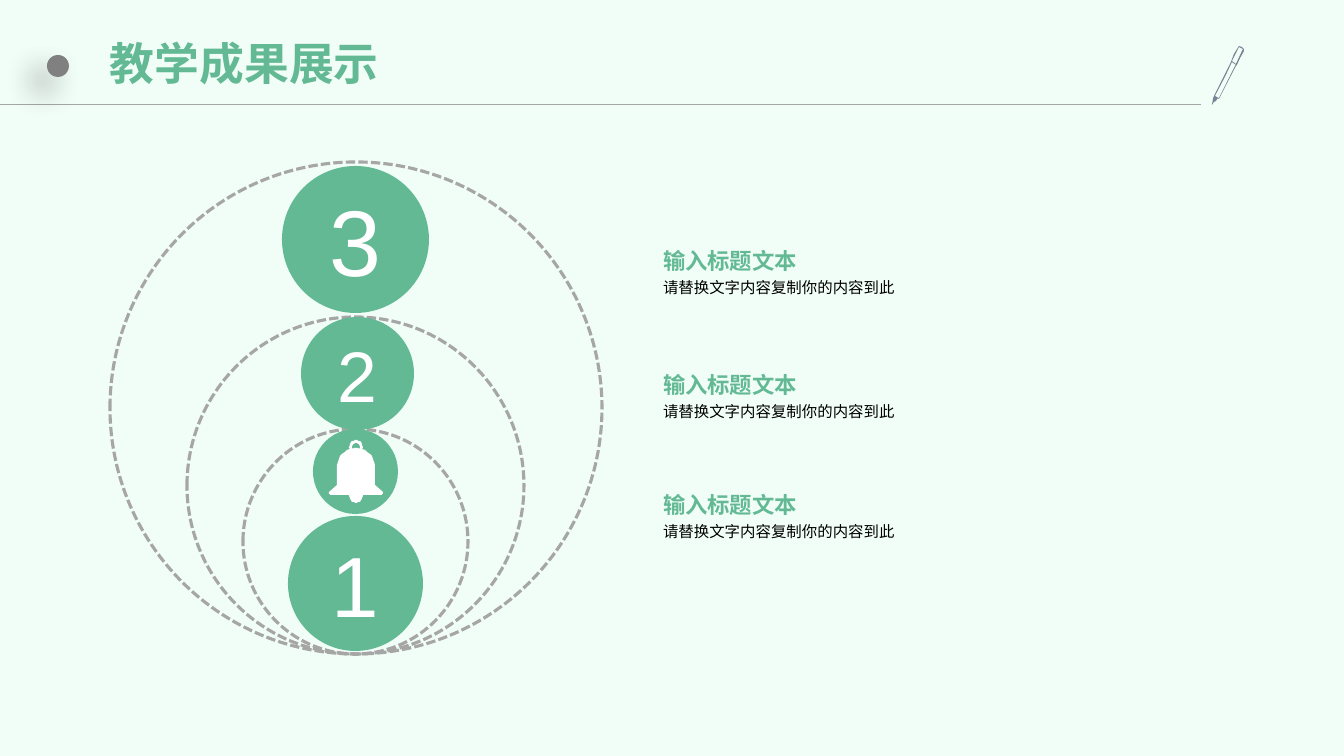
"""Build the teaching results slide with nested rings and three captions."""
from lxml import etree
from pptx import Presentation
from pptx.dml.color import RGBColor as RGB
from pptx.enum.dml import MSO_LINE as Dash
from pptx.enum.shapes import MSO_CONNECTOR as Conn, MSO_SHAPE as Shape
from pptx.enum.text import MSO_ANCHOR as Anchor, PP_ALIGN as Align
from pptx.oxml import parse_xml
from pptx.oxml.ns import nsdecls, qn
from pptx.util import Pt

TITLE = "教学成果展示"
CAPTIONS = [
    (274, "输入标题文本", "请替换文字内容复制你的内容到此"),
    (398, "输入标题文本", "请替换文字内容复制你的内容到此"),
    (518, "输入标题文本", "请替换文字内容复制你的内容到此"),
]
RINGS = [225, 337, 492]
DISCS = [
    (282, 166, 147, "3", 66.6),
    (301, 317, 113, "2", 51.1),
    (313, 429, 85, "", 0),
    (288, 516, 135, "1", 61),
]
MID, BASE = 356, 654
BELL = [
    [(356, 440)],
    [(359, 440), (363, 444), (363, 448)],
    [(362, 449)],
    [(370, 451), (375, 459), (375, 468)],
    [(375, 485)],
    [(383, 492)],
    [(383, 494), (382, 495), (380, 495)],
    [(363, 495)],
    [(363, 499), (359, 503), (356, 503)],
]
HOLE = [
    [(356, 443)],
    [(358, 443), (360, 445), (360, 448)],
    [(359, 449)],
    [(358, 448), (357, 448), (356, 448)],
]
PEN = [
    [(1244, 49), (1242, 47), (1239, 46), (1234, 54), (1231, 62), (1214, 96),
     (1213, 99), (1212, 105), (1214, 102), (1216, 101), (1218, 98), (1219, 99),
     (1236, 66), (1237, 65), (1243, 52), (1238, 62), (1244, 51)],
    [(1235, 66), (1219, 98), (1215, 96), (1226, 75), (1232, 62), (1236, 65)],
    [(1236, 64), (1232, 61), (1239, 47), (1243, 49)],
]
MINT, GREEN = RGB(0xF1, 0xFE, 0xF7), RGB(0x63, 0xB9, 0x94)
GREY, DARK, SLATE = RGB(0xA6, 0xA6, 0xA6), RGB(0x80, 0x80, 0x80), RGB(0x77, 0x84, 0x95)
WHITE, BLACK = RGB(0xFF, 0xFF, 0xFF), RGB(0, 0, 0)
SANS, HAN = "Arial", "Noto Sans CJK SC"
PX = 914400 / 100.8


def px(*vals):
    return [round(v * PX) for v in vals]


def paint(shape, color):
    shape.shadow.inherit = False
    shape.fill.solid()
    shape.fill.fore_color.rgb = color
    shape.line.fill.background()
    return shape


def add(kind, box, color):
    return paint(slide.shapes.add_shape(kind, *px(*box)), color)


def write(frame, text, size, color, face=SANS, bold=False):
    para = frame.paragraphs[0]
    para.text = text
    font = para.font
    font.size, font.name, font.bold = Pt(size), face, bold
    font.color.rgb = color
    props = para._p.pPr.find(qn("a:defRPr"))
    etree.SubElement(props, qn("a:ea")).set("typeface", HAN)
    return para


def label(box, anchor, pad, wrap, *style):
    frame = slide.shapes.add_textbox(*px(*box)).text_frame
    frame.word_wrap, frame.vertical_anchor = wrap, anchor
    frame.margin_left = frame.margin_right = px(pad)[0]
    frame.margin_top = frame.margin_bottom = px(pad / 2)[0]
    return write(frame, *style)


def trace(half, steps=8):
    """Sample the right half of an outline and mirror it."""
    pts = []
    for part in half:
        if len(part) == 1:
            pts += part
            continue
        knots = [pts[-1], *part]
        for i in range(1, steps + 1):
            t = i / steps
            mix = [(1 - t) ** 3, 3 * t * (1 - t) ** 2, 3 * t * t * (1 - t), t ** 3]
            pts.append(tuple(sum(m * k[n] for m, k in zip(mix, knots)) for n in (0, 1)))
    return pts + [(2 * MID - x, y) for x, y in pts[-2:0:-1]]


def draw(loops, color):
    path = slide.shapes.build_freeform(*loops[0][0], scale=PX)
    for i, loop in enumerate(loops):
        if i:
            path.move_to(*loop[0])
        path.add_line_segments(loop[1:], close=True)
    return paint(path.convert_to_shape(), color)


deck = Presentation()
deck.slide_width, deck.slide_height = px(1344, 756)
slide = deck.slides.add_slide(deck.slide_layouts[6])

add(Shape.RECTANGLE, (0, 0, 1344, 756), MINT)
label((103, 19, 1100, 95), Anchor.MIDDLE, 7, True, TITLE, 32, GREEN, HAN, True).line_spacing = 0.9
rule = slide.shapes.add_connector(Conn.STRAIGHT, *px(0, 105, 1201, 105))
rule.line.color.rgb, rule.line.width = GREY, Pt(0.75)
etree.SubElement(rule._element.spPr, qn("a:effectLst"))

dot = add(Shape.OVAL, (47, 55, 22, 22), DARK)
dot._element.spPr.find(qn("a:effectLst")).append(parse_xml(
    f'<a:outerShdw {nsdecls("a")} blurRad="{Pt(22)}" dist="{Pt(15)}" dir="8100000" '
    'algn="ctr" rotWithShape="0"><a:srgbClr val="000000"><a:alpha val="40000"/>'
    '</a:srgbClr></a:outerShdw>'))
draw(PEN, SLATE)

for size in RINGS:
    ring = add(Shape.OVAL, (MID - (size + 1) // 2, BASE - size, size, size), WHITE)
    ring.fill.background()
    ring.line.color.rgb, ring.line.width = GREY, Pt(2.25)
    ring.line.dash_style = Dash.SQUARE_DOT

for left, top, size, mark, points in DISCS:
    disc = add(Shape.OVAL, (left, top, size, size), GREEN)
    if mark:
        frame = disc.text_frame
        frame.word_wrap, frame.vertical_anchor = False, Anchor.MIDDLE
        write(frame, mark, points, WHITE).alignment = Align.CENTER

for seam, head, body in CAPTIONS:
    label((663, seam - 27, 603, 27), Anchor.BOTTOM, 0, False, head, 16, GREEN, SANS, True)
    label((663, seam, 602, 83), Anchor.TOP, 0, True, body, 11, BLACK).line_spacing = 1.2

draw([trace(BELL), trace(HOLE)], WHITE)
deck.save("out.pptx")
